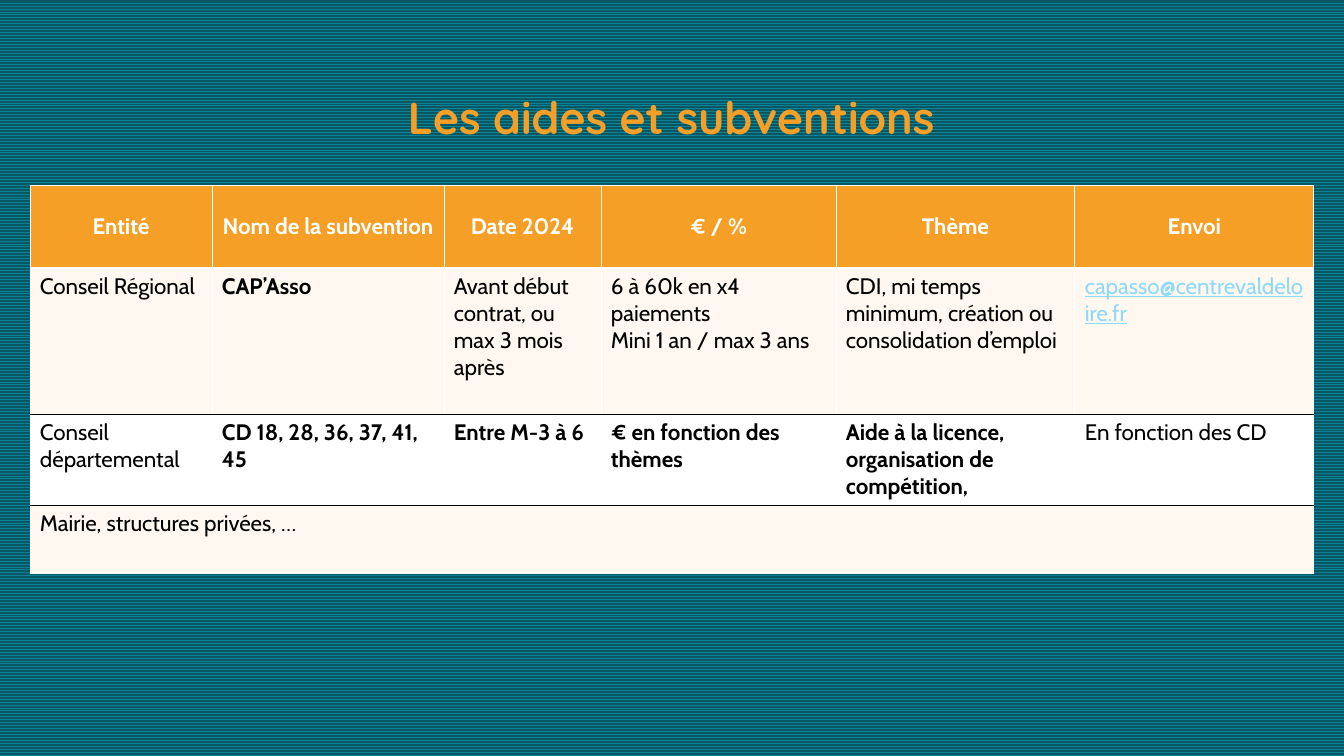
import pptx
import pptx.dml.color
import pptx.enum.dml
import pptx.enum.text
import pptx.oxml
import pptx.oxml.ns
import pptx.util

RGBColor = pptx.dml.color.RGBColor
PX = 914400 / 100.8

ORANGE = RGBColor(0xF5, 0x9F, 0x26)
CREAM = RGBColor(0xFE, 0xF8, 0xF0)
WHITE = RGBColor(0xFF, 0xFF, 0xFF)
BLACK = RGBColor(0x00, 0x00, 0x00)
LINK_BLUE = RGBColor(0x8E, 0xD9, 0xF6)
TEAL = RGBColor(0x0D, 0x82, 0x95)
DARK_TEAL = RGBColor(0x08, 0x57, 0x64)

HEADINGS = ["Entité", "Nom de la subvention", "Date 2024", "€ / %", "Thème", "Envoi"]
REGION = [
    "Conseil Régional",
    "CAP’Asso",
    "Avant début contrat, ou max 3 mois après",
    "6 à 60k en x4 paiements\nMini 1 an / max 3 ans",
    "CDI, mi temps minimum, création ou consolidation d’emploi",
    "capasso@centrevaldeloire.fr",
]
DEPARTMENT = [
    "Conseil départemental",
    "CD 18, 28, 36, 37, 41, 45",
    "Entre M-3 à 6",
    "€ en fonction des thèmes",
    "Aide à la licence, organisation de compétition, ",
    "En fonction des CD",
]
OTHERS = ["Mairie, structures privées, …"] + [""] * 5

COLUMN_WIDTHS = [182, 232, 157, 235, 239, 239]
ROW_HEIGHTS = [83, 146, 90, 68]
ROW_FILLS = [ORANGE, CREAM, WHITE, CREAM]
BOLD_COLUMNS = [range(6), [1], range(1, 5), []]
RULES = [(WHITE, 0.75), (WHITE, 1.5), (BLACK, 0.25), (BLACK, 0.25), (WHITE, 0.75)]
EMAIL_CELL = (1, 5)


def px(length):
    """Turn a length in px into EMU."""
    return pptx.util.Emu(round(length * PX))


def style_span(span, font, size, color, bold):
    """Give a run its font, size, colour and weight."""
    span.font.name = font
    span.font.size = pptx.util.Pt(size)
    span.font.color.rgb = color
    span.font.bold = bold


def set_borders(cell, top, bottom):
    """Draw white sides and the given top and bottom rules on a cell."""
    side = (WHITE, 0.75)
    properties = cell._tc.get_or_add_tcPr()
    edges = [("lnL", side), ("lnR", side), ("lnT", top), ("lnB", bottom)]
    for position, (edge, (color, width)) in enumerate(edges):
        line = pptx.oxml.parse_xml(
            f'<a:{edge} {pptx.oxml.ns.nsdecls("a")} w="{pptx.util.Pt(width)}">'
            f'<a:solidFill><a:srgbClr val="{color}"/></a:solidFill></a:{edge}>'
        )
        properties.insert(position, line)


def fill_background(page):
    """Cover the page with the teal zigzag pattern."""
    fill = page.background.fill
    fill.patterned()
    fill.pattern = pptx.enum.dml.MSO_PATTERN.ZIG_ZAG
    fill.fore_color.rgb = TEAL
    fill.back_color.rgb = DARK_TEAL


def add_title(page, left, top, width, height):
    """Place the centred title in the given box."""
    title = page.shapes.title
    title.left, title.top = px(left), px(top)
    title.width, title.height = px(width), px(height)
    frame = title.text_frame
    frame.text = "Les aides et subventions"
    frame.vertical_anchor = pptx.enum.text.MSO_ANCHOR.BOTTOM
    para = frame.paragraphs[0]
    para.alignment = pptx.enum.text.PP_ALIGN.CENTER
    para.line_spacing = 0.9
    style_span(para.runs[0], "Quicksand", 32, ORANGE, True)


def fill_cell(cell, text, row, column):
    """Write and format one cell of the grants table."""
    header = row == 0
    cell.fill.solid()
    cell.fill.fore_color.rgb = ROW_FILLS[row]
    set_borders(cell, RULES[row], RULES[row + 1])
    cell.margin_left = cell.margin_right = px(10)
    cell.margin_top = cell.margin_bottom = px(5)
    anchors = pptx.enum.text.MSO_ANCHOR
    cell.vertical_anchor = anchors.MIDDLE if header else anchors.TOP
    cell.text_frame.text = text
    email = (row, column) == EMAIL_CELL
    color = WHITE if header else LINK_BLUE if email else BLACK
    for para in cell.text_frame.paragraphs:
        if header:
            para.alignment = pptx.enum.text.PP_ALIGN.CENTER
        for span in para.runs:
            style_span(span, "Cabin", 16, color, column in BOLD_COLUMNS[row])
            if email:
                span.font.underline = True


def add_grants_table(page, left, top):
    """Place the table of grants from its top left corner."""
    rows = [HEADINGS, REGION, DEPARTMENT, OTHERS]
    table = page.shapes.add_table(
        len(rows), len(HEADINGS), px(left), px(top),
        px(sum(COLUMN_WIDTHS)), px(sum(ROW_HEIGHTS)),
    ).table
    for column, width in zip(table.columns, COLUMN_WIDTHS):
        column.width = px(width)
    for row, height in zip(table.rows, ROW_HEIGHTS):
        row.height = px(height)
    for row, texts in enumerate(rows):
        for column, text in enumerate(texts):
            fill_cell(table.cell(row, column), text, row, column)
    last = len(rows) - 1
    table.cell(last, 0).merge(table.cell(last, len(HEADINGS) - 1))


def main():
    """Build the deck and save it."""
    deck = pptx.Presentation()
    deck.slide_width, deck.slide_height = px(1344), px(756)
    page = deck.slides.add_slide(deck.slide_layouts[0])
    subtitle = page.placeholders[1].element
    subtitle.getparent().remove(subtitle)
    fill_background(page)
    add_title(page, 168, 63, 1007, 86)
    add_grants_table(page, 30, 185)
    deck.save("out.pptx")


if __name__ == "__main__":
    main()
